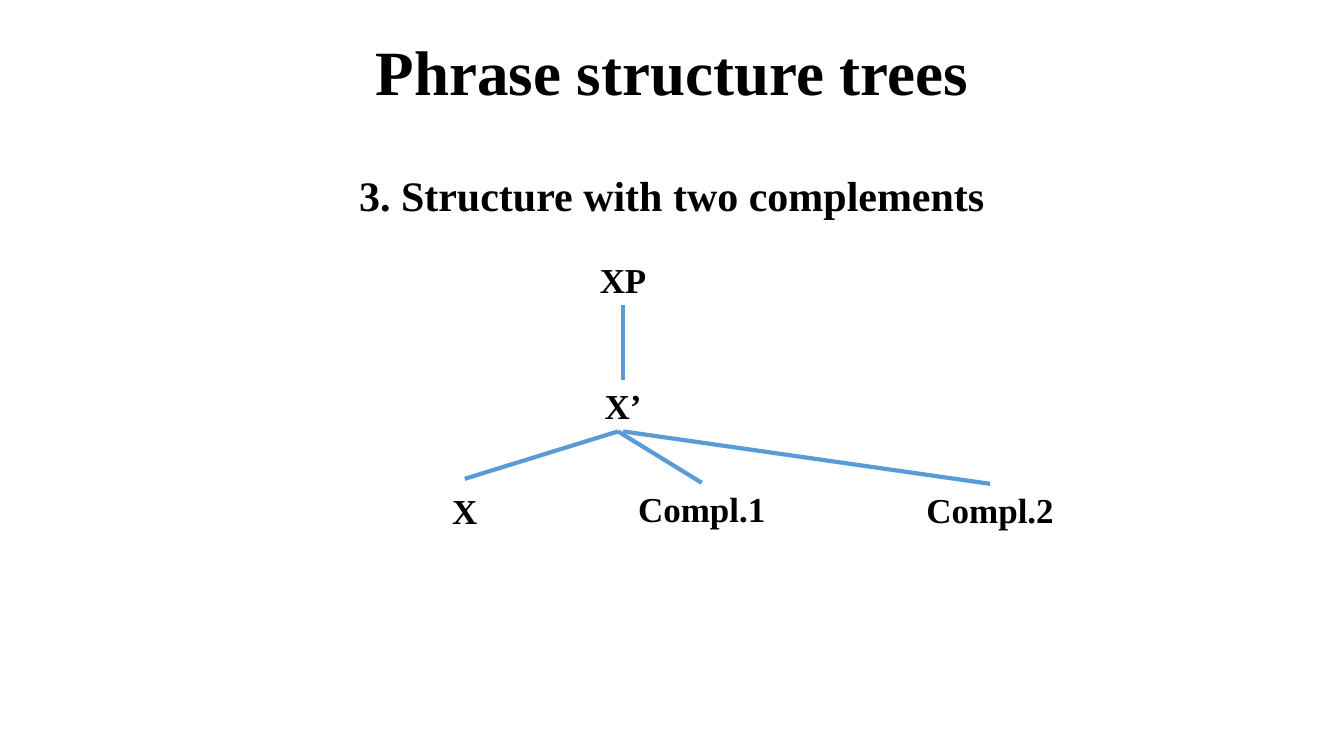
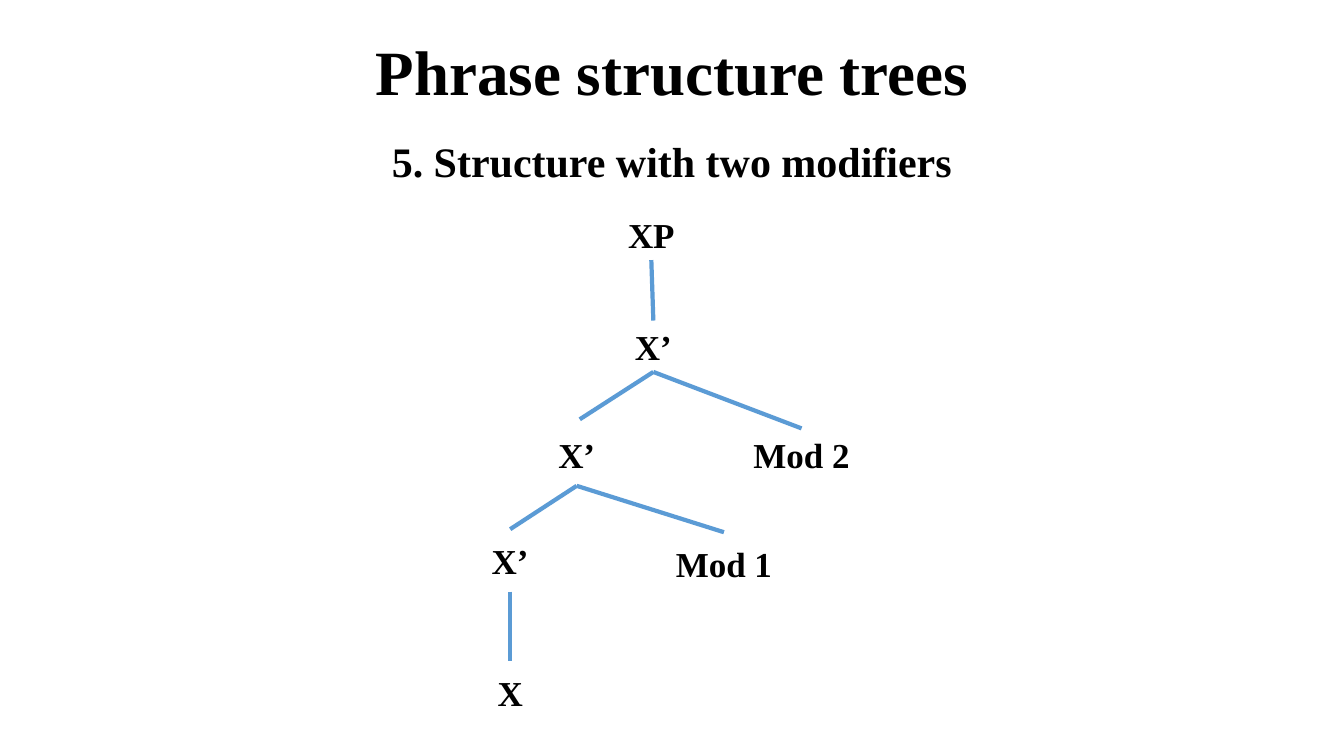
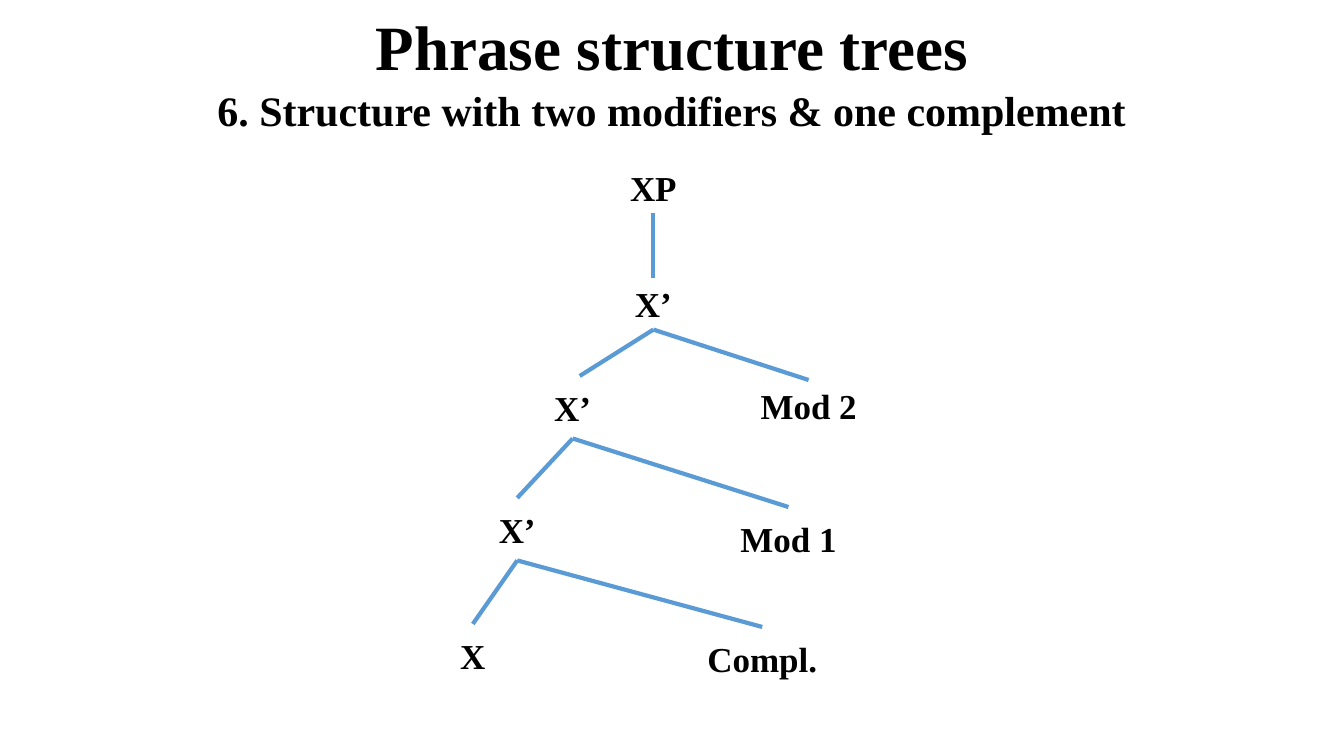
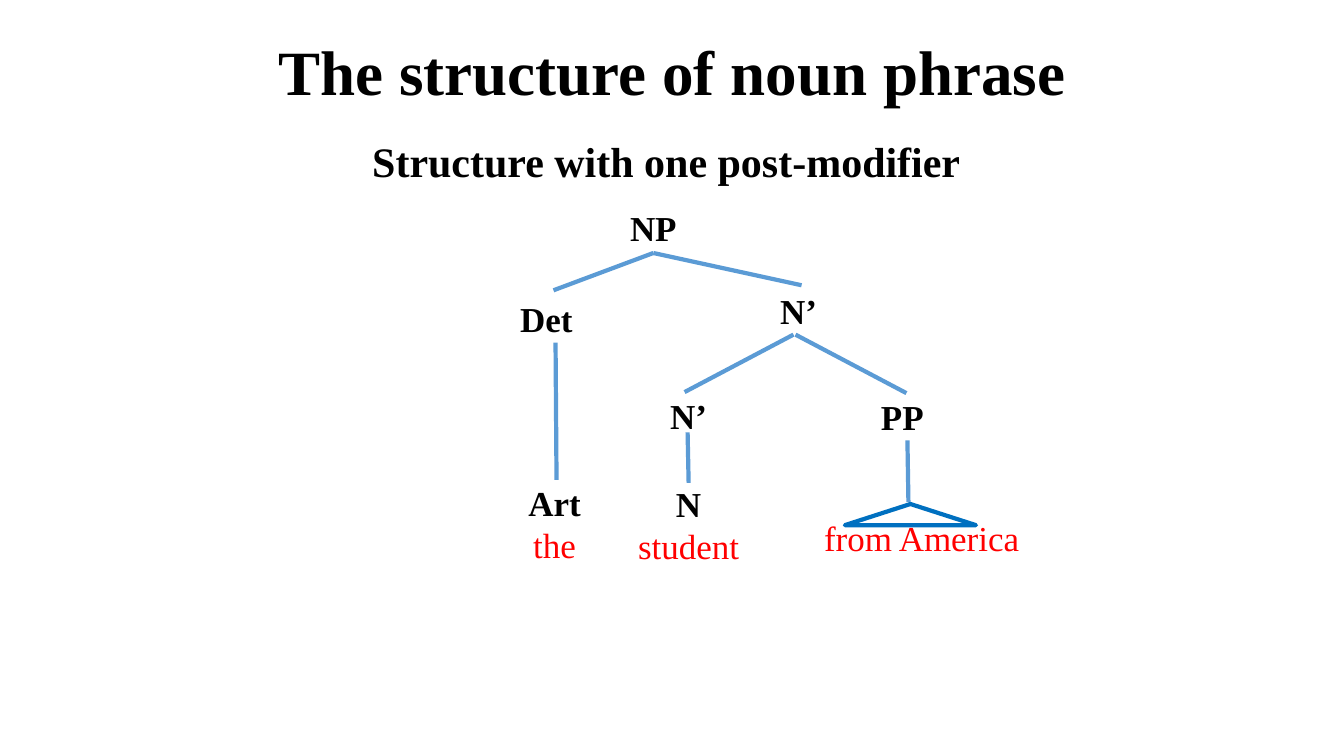
from lxml import etree
from pptx import Presentation
from pptx.dml.color import RGBColor
from pptx.enum.shapes import MSO_CONNECTOR, MSO_SHAPE
from pptx.enum.text import MSO_ANCHOR, PP_ALIGN
from pptx.oxml.ns import qn
from pptx.util import Inches, Pt

STRAIGHT = MSO_CONNECTOR.STRAIGHT
TRIANGLE = MSO_SHAPE.ISOSCELES_TRIANGLE
TOP, MIDDLE = MSO_ANCHOR.TOP, MSO_ANCHOR.MIDDLE
CENTER = PP_ALIGN.CENTER
TOP_SIDE, BOTTOM_SIDE = 0, 2

FONT = "Times New Roman"
BLACK, RED, BRANCH, OUTLINE = "000000", "FF0000", "5B9BD5", "0070C0"
TITLE_SIZE, HEADING_SIZE, NODE_SIZE = 45, 30, 25
LINE_WIDTH = 3
WIDTH, HEIGHT = 13.33, 7.5
MIDLINE = WIDTH / 2
CONTENT_WIDTH, TITLE_HEIGHT = 11.5, 0.7
LOW, TALL = 0.51, 0.62

# Node: category, word, centre, top, width, height.
# Branch: parent, child, then start and end points where they leave the box sides.
SLIDES = [
    {
        "title": ("Phrase structure trees", 0.4),
        "heading": ("3. Structure with two complements", MIDLINE, 1.69, 5.11),
        "nodes": {
            "phrase": ("XP", "", 6.18, 2.52, 0.87, LOW),
            "bar": ("X’", "", 6.18, 3.77, 0.87, LOW),
            "head": ("X", "", 4.61, 4.75, 0.87, TALL),
            "first": ("Compl.1", "", 6.96, 4.79, 1.79, LOW),
            "second": ("Compl.2", "", 9.82, 4.8, 1.86, LOW),
        },
        "branches": [
            ("phrase", "bar", None, None),
            ("bar", "head", (6.13, 4.28), None),
            ("bar", "first", (6.13, 4.28), None),
            ("bar", "second", None, None),
        ],
    },
    {
        "title": ("Phrase structure trees", 0.4),
        "heading": ("5. Structure with two modifiers", MIDLINE, 1.35, 5.92),
        "nodes": {
            "phrase": ("XP", "", 6.46, 2.07, 0.87, LOW),
            "upper": ("X’", "", 6.48, 3.18, 0.87, LOW),
            "middle": ("X’", "", 5.72, 4.2, 0.87, TALL),
            "second": ("Mod 2", "", 7.95, 4.25, 1.57, LOW),
            "lower": ("X’", "", 5.06, 5.25, 0.87, TALL),
            "first": ("Mod 1", "", 7.18, 5.28, 1.17, TALL),
            "head": ("X", "", 5.06, 6.56, 0.87, TALL),
        },
        "branches": [
            ("phrase", "upper", None, None),
            ("upper", "middle", None, (5.75, 4.16)),
            ("upper", "second", None, None),
            ("middle", "lower", None, None),
            ("middle", "first", None, None),
            ("lower", "head", None, None),
        ],
    },
    {
        "title": ("Phrase structure trees", 0.15),
        "heading": ("6. Structure with two modifiers & one complement", MIDLINE, 0.85, 6.48),
        "nodes": {
            "phrase": ("XP", "", 6.48, 1.6, 0.87, LOW),
            "upper": ("X’", "", 6.48, 2.76, 0.87, LOW),
            "middle": ("X’", "", 5.68, 3.73, 0.87, TALL),
            "second": ("Mod 2", "", 8.02, 3.77, 1.57, LOW),
            "lower": ("X’", "", 5.13, 4.94, 0.87, TALL),
            "first": ("Mod 1", "", 7.82, 5.03, 1.17, TALL),
            "head": ("X", "", 4.69, 6.19, 0.87, TALL),
            "complement": ("Compl.", "", 7.56, 6.22, 1.83, TALL),
        },
        "branches": [
            ("phrase", "upper", None, None),
            ("upper", "middle", None, (5.75, 3.73)),
            ("upper", "second", None, None),
            ("middle", "lower", None, None),
            ("middle", "first", None, None),
            ("lower", "head", None, None),
            ("lower", "complement", None, None),
        ],
    },
    {
        "title": ("The structure of noun phrase", 0.4),
        "heading": ("Structure with one post-modifier", 6.61, 1.35, 5.92),
        "nodes": {
            "phrase": ("NP", "", 6.48, 2, 0.87, LOW),
            "determiner": ("Det", "", 5.42, 2.9, 1.57, LOW),
            "upper": ("N’", "", 7.92, 2.83, 1.57, LOW),
            "lower": ("N’", "", 6.83, 3.81, 0.87, TALL),
            "modifier": ("PP", "", 8.95, 3.88, 1.57, LOW),
            "article": ("Art", "the", 5.5, 4.76, 1.12, 0.87),
            "noun": ("N", "student", 6.83, 4.79, 1.73, 0.82),
            "origin": ("", "from America", 9.14, 5.03, 2.32, 0.6),
        },
        "triangle": (8.38, 5, 1.3, 0.21),
        "branches": [
            ("phrase", "determiner", None, (5.49, 2.88)),
            ("phrase", "upper", None, (7.95, 2.83)),
            ("upper", "lower", (7.87, 3.32), (6.79, 3.89)),
            ("upper", "modifier", (7.89, 3.32), (8.99, 3.9)),
            ("determiner", "article", (5.51, 3.4), (5.52, 4.76)),
            ("lower", "noun", (6.82, 4.29), None),
            ("modifier", "origin", (9, 4.37), (9.01, 4.98)),
        ],
    },
]


def color(value):
    return RGBColor.from_string(value)


def add_text(page, lines, center, top, width, height, size, anchor=MIDDLE):
    area = [Inches(value) for value in (center - width / 2, top, width, height)]
    box = page.shapes.add_textbox(*area)
    frame = box.text_frame
    frame.word_wrap = True
    frame.vertical_anchor = anchor
    for index, (text, ink, bold) in enumerate(lines):
        para = frame.add_paragraph() if index else frame.paragraphs[0]
        para.text = text
        para.alignment = CENTER
        para.font.name = FONT
        para.font.size = Pt(size)
        para.font.bold = bold
        para.font.color.rgb = color(ink)
    return box


def add_headings(page, title, heading):
    text, top = title
    title_box = add_text(page, [(text, BLACK, True)], MIDLINE, top,
                         CONTENT_WIDTH, TITLE_HEIGHT, TITLE_SIZE)
    text, center, top, height = heading
    heading_box = add_text(page, [(text, BLACK, True)], center, top,
                           CONTENT_WIDTH, height, HEADING_SIZE, TOP)
    for box in (title_box, heading_box):
        box.text_frame.paragraphs[0].line_spacing = 0.9
    heading_box.text_frame.paragraphs[0].space_before = Pt(10)


def add_node(page, category, word, *area):
    lines = [(category, BLACK, True), (word, RED, False)]
    return add_text(page, [line for line in lines if line[0]], *area, NODE_SIZE)


def add_branch(page, parent, child, start, end):
    points = [Inches(value) for value in (start or (0, 0)) + (end or (0, 0))]
    branch = page.shapes.add_connector(STRAIGHT, *points)
    if not start:
        branch.begin_connect(parent, BOTTOM_SIDE)
    if not end:
        branch.end_connect(child, TOP_SIDE)
    branch.line.color.rgb = color(BRANCH)
    branch.line.width = Pt(LINE_WIDTH)
    etree.SubElement(branch._element.spPr, qn("a:effectLst"))


def add_triangle(page, area):
    triangle = page.shapes.add_shape(TRIANGLE, *[Inches(value) for value in area])
    triangle.shadow.inherit = False
    triangle.fill.background()
    triangle.line.color.rgb = color(OUTLINE)
    triangle.line.width = Pt(LINE_WIDTH)


def main():
    deck = Presentation()
    deck.slide_width, deck.slide_height = Inches(WIDTH), Inches(HEIGHT)
    for content in SLIDES:
        page = deck.slides.add_slide(deck.slide_layouts[6])
        add_headings(page, content["title"], content["heading"])
        boxes = {name: add_node(page, *node) for name, node in content["nodes"].items()}
        if "triangle" in content:
            add_triangle(page, content["triangle"])
        for parent, child, start, end in content["branches"]:
            add_branch(page, boxes[parent], boxes[child], start, end)
    deck.save("out.pptx")


if __name__ == "__main__":
    main()
